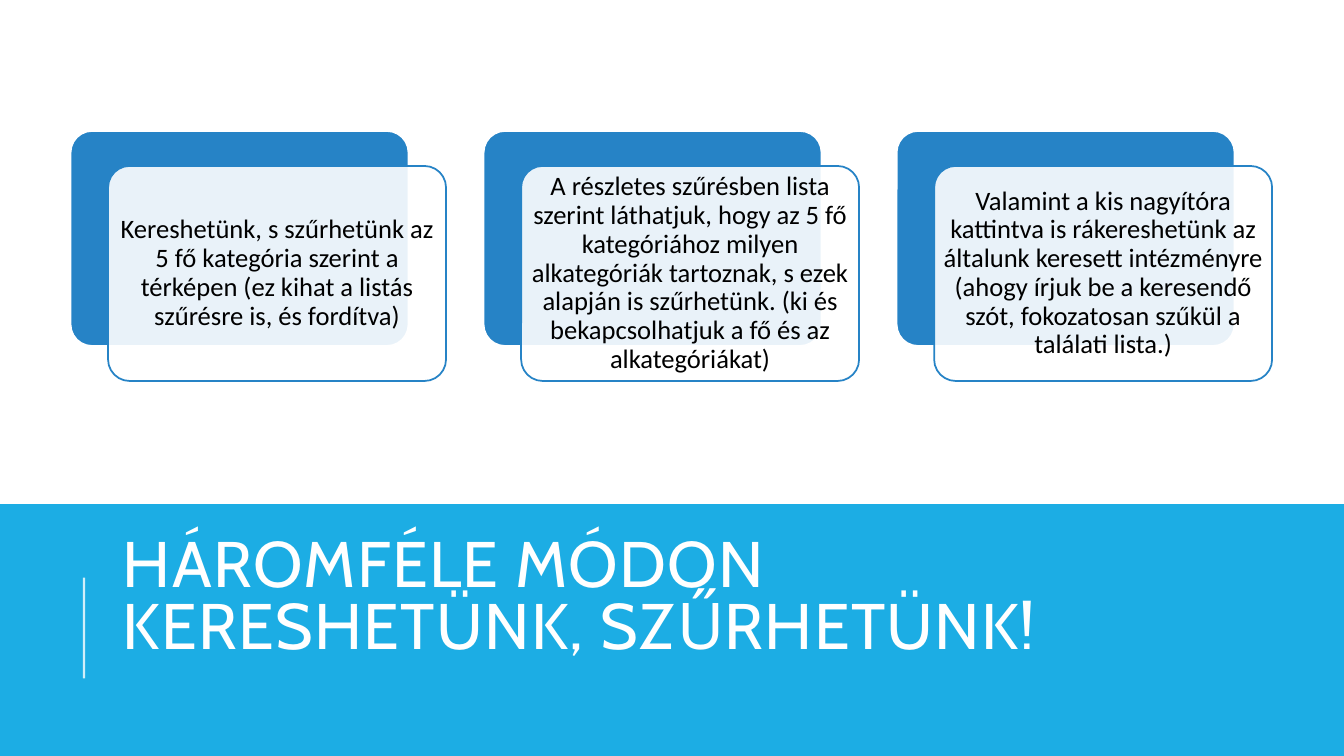
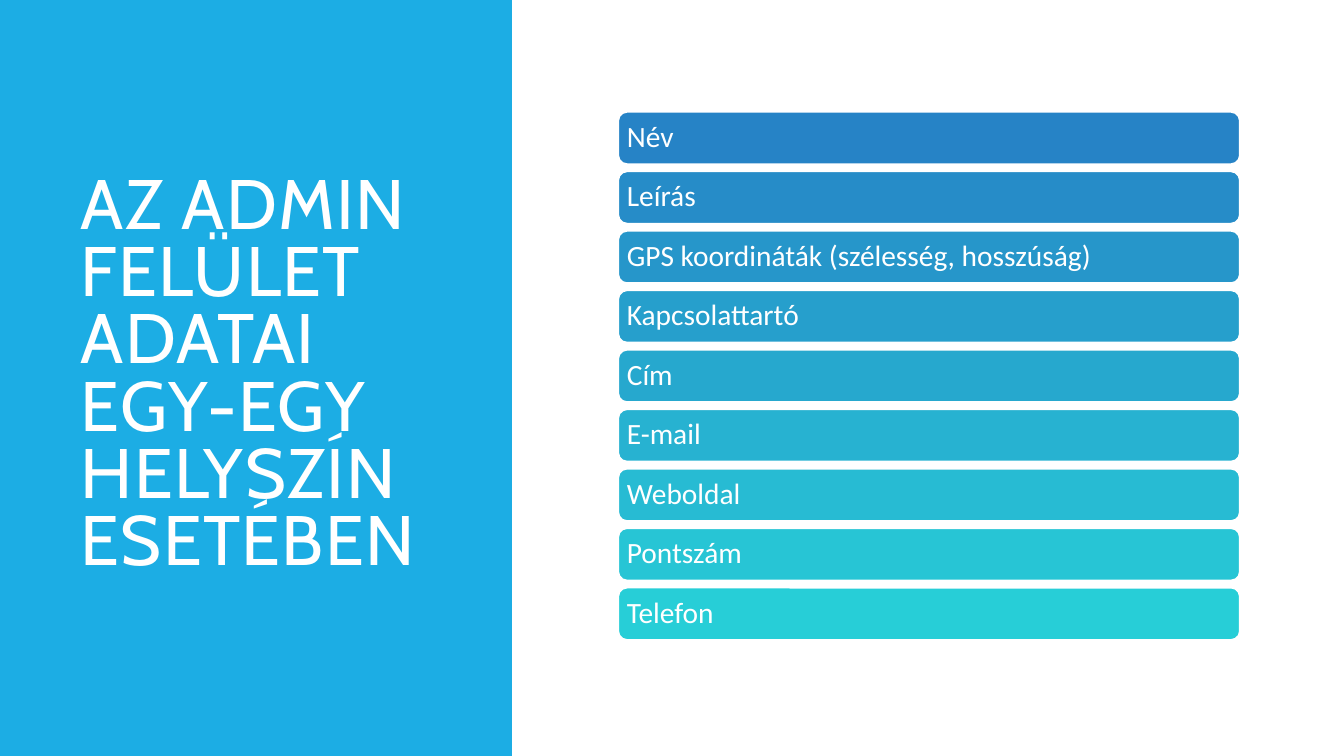
import pptx
import pptx.util
import pptx.dml.color
import pptx.enum.shapes
import pptx.enum.text
import pptx.oxml.ns
import lxml.etree

WIDE, HIGH = 13.33, 7.5
SKY, BLUE, TEAL, WHITE, BLACK = "1CADE4", "2683C6", "27CED7", "FFFFFF", "000000"
HEAD = dict(name="Cabin", color=WHITE)
CARD = dict(name="Calibri", size=19, color=BLACK)
BAR = dict(name="Calibri", size=21, color=WHITE)
KIND = pptx.enum.shapes.MSO_SHAPE
ALIGN = pptx.enum.text.PP_ALIGN
PAGE = (0, 0, WIDE, HIGH)

CARDS = [
    "Kereshetünk, s szűrhetünk az 5 fő kategória szerint a térképen (ez kihat a listás szűrésre is, és fordítva)",
    "A részletes szűrésben lista szerint láthatjuk, hogy az 5 fő kategóriához milyen alkategóriák tartoznak, s ezek alapján is szűrhetünk. (ki és bekapcsolhatjuk a fő és az alkategóriákat)",
    "Valamint a kis nagyítóra kattintva is rákereshetünk az általunk keresett intézményre (ahogy írjuk be a keresendő szót, fokozatosan szűkül a találati lista.)",
]
BARS = ["Név", "Leírás", "GPS koordináták (szélesség, hosszúság)", "Kapcsolattartó",
        "Cím", "E-mail", "Weboldal", "Pontszám", "Telefon"]


def part(box, left, top, wide, high):
    """Return the part of box given in percent of its size."""
    x, y, w, h = box
    return (x + w * left / 100, y + h * top / 100, w * wide / 100, h * high / 100)


def inch(box):
    return [pptx.util.Inches(side) for side in box]


def put(item, values):
    for key, value in values.items():
        setattr(item, key, value)


def paint(fill, shade, solid=100):
    fill.solid()
    fill.fore_color.rgb = pptx.dml.color.RGBColor.from_string(shade)
    if solid < 100:
        tint = fill._xPr.find(".//" + pptx.oxml.ns.qn("a:srgbClr"))
        lxml.etree.SubElement(tint, pptx.oxml.ns.qn("a:alpha")).set("val", str(solid * 1000))


def blend(start, end, share):
    pairs = [(int(start[i:i + 2], 16), int(end[i:i + 2], 16)) for i in (0, 2, 4)]
    return "".join(f"{round(a + (b - a) * share):02X}" for a, b in pairs)


def block(slide, kind, box, shade, edge=None, solid=100, curve=None):
    shape = slide.shapes.add_shape(kind, *inch(box))
    shape.shadow.inherit = False
    paint(shape.fill, shade, solid)
    if edge:
        paint(shape.line.fill, edge)
        shape.line.width = pptx.util.Pt(1.25)
    else:
        shape.line.fill.background()
    if curve:
        shape.adjustments[0] = curve
    return shape


def write(shape, text, font, align, space, inset=None):
    frame = shape.text_frame
    frame.text = text
    put(frame, dict(word_wrap=True, auto_size=pptx.enum.text.MSO_AUTO_SIZE.NONE,
                    vertical_anchor=pptx.enum.text.MSO_ANCHOR.MIDDLE))
    if inset is not None:
        gap = pptx.util.Inches(inset)
        put(frame, dict(margin_left=gap, margin_right=gap, margin_top=gap, margin_bottom=gap))
    line = frame.paragraphs[0]
    put(line, dict(alignment=align, line_spacing=space))
    run = line.runs[0]
    put(run.font, dict(name=font["name"], size=pptx.util.Pt(font["size"])))
    paint(run.font.fill, font["color"])
    return run


def banner(slide, box, place, text, size):
    band = block(slide, KIND.RECTANGLE, box, SKY)
    title = slide.shapes.title
    title._element.addprevious(band._element)
    put(title, dict(zip(("left", "top", "width", "height"), inch(part(box, *place)))))
    run = write(title, text, dict(HEAD, size=size), ALIGN.LEFT, 0.8)
    run.font._element.set("spc", "100")
    return title


def rule(slide, box, left, top, high):
    x, y, _, h = part(box, left, top, 0, high)
    line = slide.shapes.add_connector(pptx.enum.shapes.MSO_CONNECTOR.STRAIGHT,
                                      *inch((x, y + h, x, y)))
    paint(line.line.fill, WHITE, 80)
    line.line.width = pptx.util.Pt(1.5)
    lxml.etree.SubElement(line._element.spPr, pptx.oxml.ns.qn("a:effectLst"))


def cards(slide, box, texts):
    wide = 31.25
    step = (100 - wide) / (len(texts) - 1)
    for i, text in enumerate(texts):
        cell = part(box, i * step, 0, wide, 100)
        block(slide, KIND.ROUNDED_RECTANGLE, part(cell, 0, 0, 90, 86), BLUE, WHITE, curve=0.1)
        front = block(slide, KIND.ROUNDED_RECTANGLE, part(cell, 10, 14, 90, 86),
                      WHITE, BLUE, 90, 0.1)
        write(front, text, CARD, ALIGN.CENTER, 0.9, 0.02)


def bars(slide, box, texts):
    high = 9.9
    last = len(texts) - 1
    for i, text in enumerate(texts):
        cell = part(box, 0, i * (100 - high) / last, 100, high)
        bar = block(slide, KIND.ROUNDED_RECTANGLE, cell, blend(BLUE, TEAL, i / last), WHITE)
        write(bar, text, BAR, ALIGN.LEFT, 0.9, 0.06)


def search(slide):
    foot = part(PAGE, 0, 66.67, 100, 33.33)
    title = banner(slide, foot, (8.4, 17.6, 79.75, 65.6),
                   "HÁROMFÉLE MÓDON KERESHETÜNK, SZŰRHETÜNK!", 46)
    title.text_frame.margin_bottom = pptx.util.Inches(0.66)
    rule(slide, foot, 6.25, 29.2, 40)
    cards(slide, part(PAGE, 5.25, 17.33, 89.4, 33.07), CARDS)


def admin(slide):
    banner(slide, part(PAGE, 0, 0, 38.1, 100), (13.78, 9.33, 73.6, 81.2),
           "AZ ADMIN FELÜLET ADATAI EGY-EGY HELYSZÍN ESETÉBEN", 50)
    bars(slide, part(PAGE, 46, 14.8, 46.25, 69.85), BARS)


def main():
    deck = pptx.Presentation()
    put(deck, dict(slide_width=pptx.util.Inches(WIDE), slide_height=pptx.util.Inches(HIGH)))
    for build in (search, admin):
        build(deck.slides.add_slide(deck.slide_layouts[5]))
    deck.save("out.pptx")


if __name__ == "__main__":
    main()
